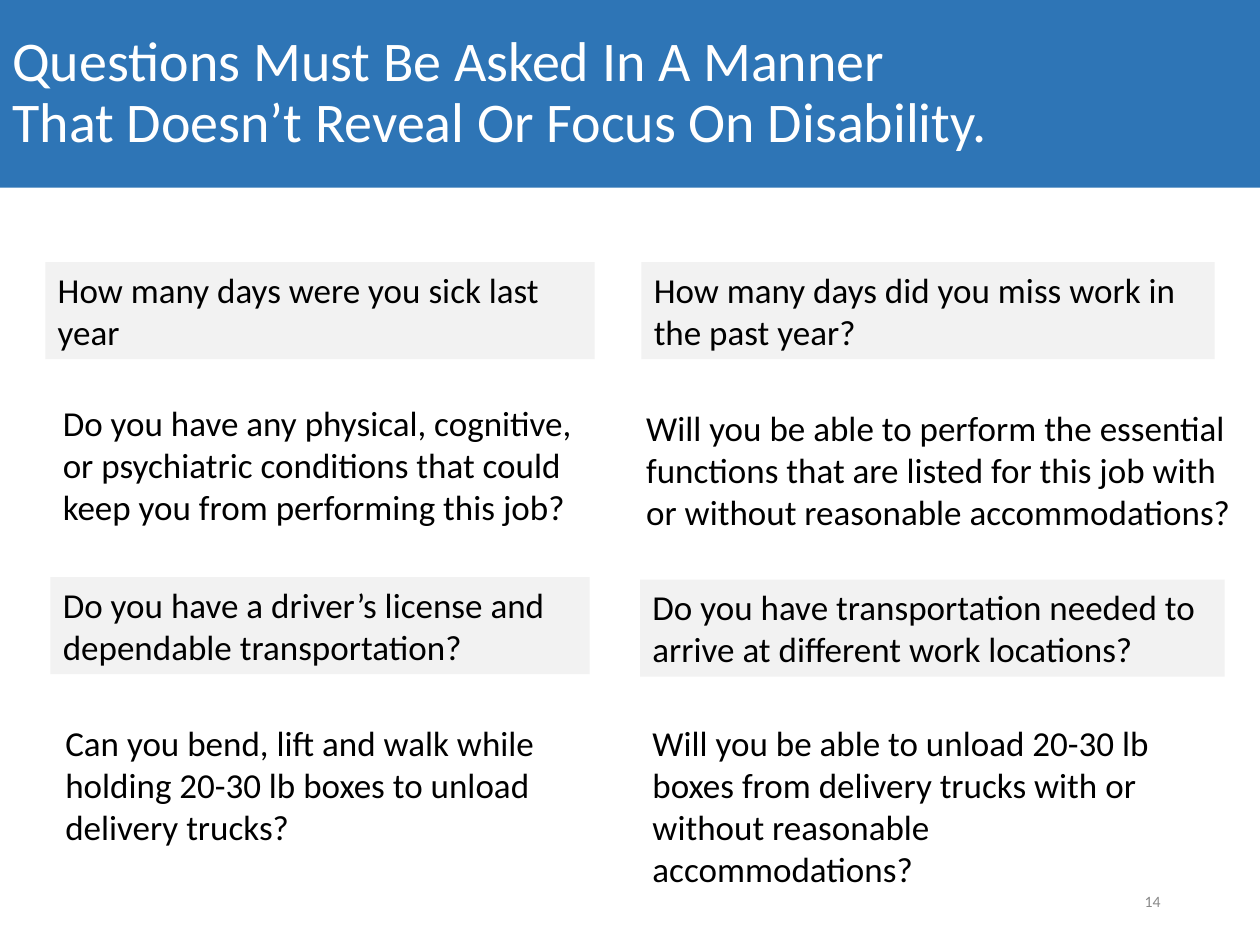
from pptx import Presentation
from pptx.dml.color import RGBColor
from pptx.enum import text
from pptx.util import Inches, Pt

COLORS = {"band": "2E75B6", "panel": "F2F2F2", "title": "FFFFFF",
          "body": "000000", "number": "898989"}
FONT = "Calibri"

# Each row: shaded or not, then (box, wording) for what to avoid and what to ask
ROWS = [
    (True,
     ((0.36, 2.08, 4.36, 0.77), "How many days were you sick last year"),
     ((5.09, 2.08, 4.55, 0.77),
      "How many days did you miss work in the past year?")),
    (False,
     ((0.4, 3.14, 4.36, 1.11),
      "Do you have any physical, cognitive, or psychiatric conditions "
      "that could keep you from performing this job?"),
     ((5.03, 3.18, 4.84, 1.11),
      "Will you be able to perform the essential functions that are listed "
      "for this job with or without reasonable accommodations?")),
    (True,
     ((0.4, 4.58, 4.28, 0.77),
      "Do you have a driver’s license and dependable transportation?"),
     ((5.08, 4.6, 4.64, 0.77),
      "Do you have transportation needed to arrive at different work "
      "locations?")),
    (False,
     ((0.42, 5.68, 3.97, 1.11),
      "Can you bend, lift and walk while holding 20-30 lb boxes to unload "
      "delivery trucks?"),
     ((5.08, 5.68, 4.42, 1.45),
      "Will you be able to unload 20-30 lb boxes from delivery trucks with "
      "or without reasonable accommodations?")),
]


def add_text(s, box, lines, size, color, fill=None,
             anchor=text.MSO_ANCHOR.TOP, align=text.PP_ALIGN.LEFT):
    """Place a wrapped text box, optionally filled, and return its paragraph."""
    sp = s.shapes.add_textbox(*(Inches(v) for v in box))
    if fill:
        sp.fill.solid()
        sp.fill.fore_color.rgb = RGBColor.from_string(COLORS[fill])
    tf = sp.text_frame
    tf.word_wrap = True
    tf.vertical_anchor = anchor
    p = tf.paragraphs[0]
    p.alignment = align
    for i, line in enumerate(lines):
        if i:
            p.add_line_break()
        r = p.add_run()
        r.text = line
        r.font.name = FONT
        r.font.size = Pt(size)
        r.font.color.rgb = RGBColor.from_string(COLORS[color])
    return p


def add_title(s, box):
    p = add_text(s, box, ["Questions Must Be Asked In A Manner ",
                          "That Doesn’t Reveal Or Focus On Disability."],
                 32, "title", "band", text.MSO_ANCHOR.MIDDLE)
    p.line_spacing = 0.9


def add_questions(s, rows):
    for shaded, *pair in rows:
        for box, question in pair:
            add_text(s, box, [question], 20, "body",
                     "panel" if shaded else None)


def add_page_number(s, box):
    add_text(s, box, ["14"], 9, "number", anchor=text.MSO_ANCHOR.MIDDLE,
             align=text.PP_ALIGN.RIGHT)


def main():
    prs = Presentation()
    prs.slide_width, prs.slide_height = Inches(10), Inches(7.5)
    s = prs.slides.add_slide(prs.slide_layouts[6])
    add_page_number(s, (7.06, 6.95, 2.25, 0.4))
    add_title(s, (0, 0, 10, 1.49))
    add_questions(s, ROWS)
    prs.save("out.pptx")


if __name__ == "__main__":
    main()
